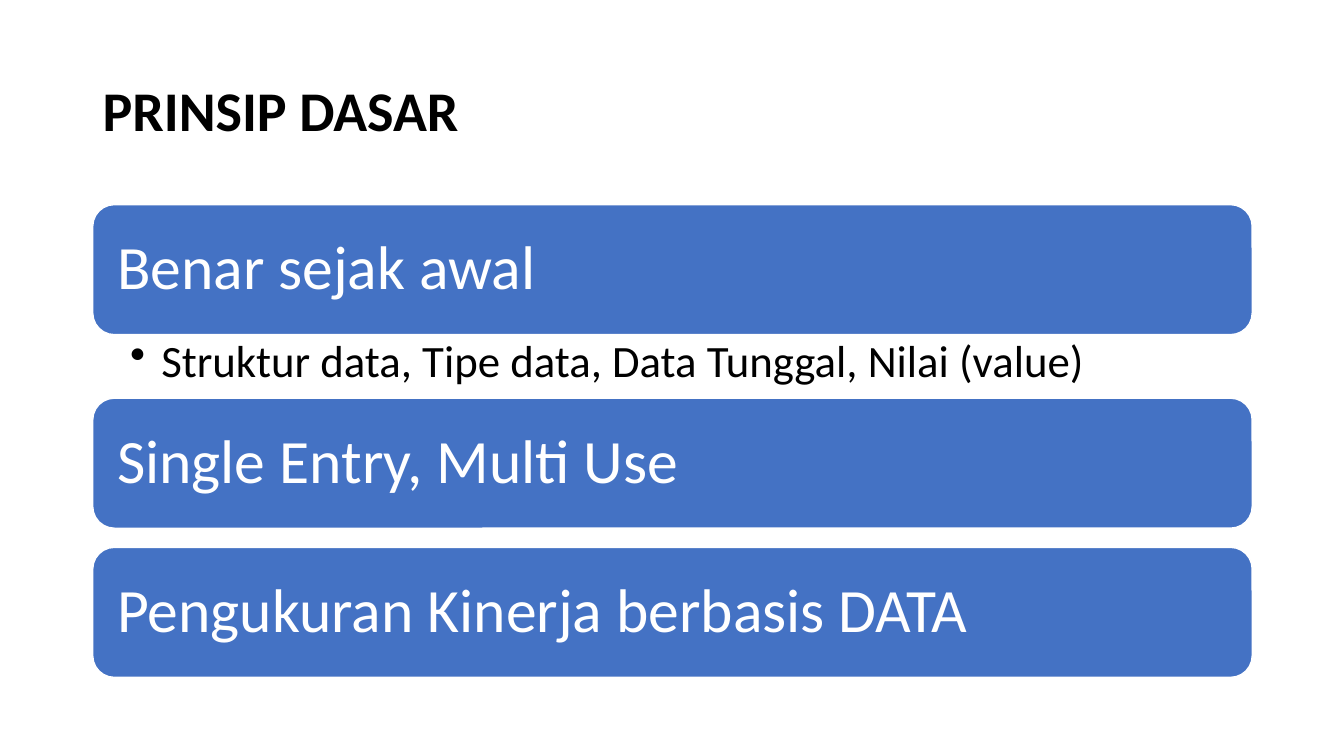
from lxml import etree
from pptx import Presentation
from pptx import util as u
from pptx.dml.color import RGBColor
from pptx.enum import shapes, text
from pptx.oxml import ns

LEFT, WIDTH = 0.92, 11.5
BAR_HEIGHT = 1.29


def color(hex_value):
    return RGBColor.from_string(hex_value)


class Deck:
    font = "Calibri"
    dark, light, blue = "000000", "FFFFFF", "4472C4"

    def __init__(self):
        self.prs = Presentation()
        self.prs.slide_width = u.Inches(13.33)
        self.prs.slide_height = u.Inches(7.5)
        self.slide = self.prs.slides.add_slide(self.prs.slide_layouts[6])

    def set_words(self, holder, words, size, hue, insets, anchor, bold=False, bullet=None):
        frame = holder.text_frame
        frame.word_wrap = True
        frame.vertical_anchor = anchor
        (frame.margin_left, frame.margin_top,
         frame.margin_right, frame.margin_bottom) = map(u.Inches, insets)
        paragraph = frame.paragraphs[0]
        paragraph.text = words
        paragraph.alignment = text.PP_ALIGN.LEFT
        paragraph.line_spacing = 0.9
        if bullet:
            paragraph.level = 1
            props = paragraph._p.get_or_add_pPr()
            props.set("marL", str(u.Inches(0.31)))
            props.set("indent", str(u.Inches(-0.31)))
            etree.SubElement(props, ns.qn("a:buChar")).set("char", bullet)
        paragraph.font.name = self.font
        paragraph.font.size = u.Pt(size)
        paragraph.font.bold = bold
        paragraph.font.color.rgb = color(hue)

    def box(self, top, height):
        return self.slide.shapes.add_textbox(
            u.Inches(LEFT), u.Inches(top), u.Inches(WIDTH), u.Inches(height))

    def title(self, words):
        self.set_words(self.box(0.4, 1.45), words, 40, self.dark,
                       (0.1, 0.05, 0.1, 0.05), text.MSO_ANCHOR.MIDDLE, bold=True)

    def bar(self, top, words):
        bar = self.slide.shapes.add_shape(
            shapes.MSO_SHAPE.ROUNDED_RECTANGLE, u.Inches(LEFT), u.Inches(top),
            u.Inches(WIDTH), u.Inches(BAR_HEIGHT))
        bar.shadow.inherit = False
        bar.fill.solid()
        bar.fill.fore_color.rgb = color(self.blue)
        bar.line.color.rgb = color(self.light)
        bar.line.width = u.Pt(1)
        self.set_words(bar, words, 44, self.light, (0.18,) * 4, text.MSO_ANCHOR.MIDDLE)

    def detail(self, top, words):
        self.set_words(self.box(top, 0.63), words, 32, self.dark,
                       (0.37, 0.04, 0.25, 0.04), text.MSO_ANCHOR.TOP, bullet="•")


def main():
    deck = Deck()
    # Heading
    deck.title("PRINSIP DASAR")
    # Principles
    principles = [
        (2.03, "Benar sejak awal"),
        (3.95, "Single Entry, Multi Use"),
        (5.43, "Pengukuran Kinerja berbasis DATA"),
    ]
    for top, principle in principles:
        deck.bar(top, principle)
    # Detail below the first principle
    deck.detail(principles[0][0] + BAR_HEIGHT,
                "Struktur data, Tipe data, Data Tunggal, Nilai (value)")
    deck.prs.save("out.pptx")


if __name__ == "__main__":
    main()
